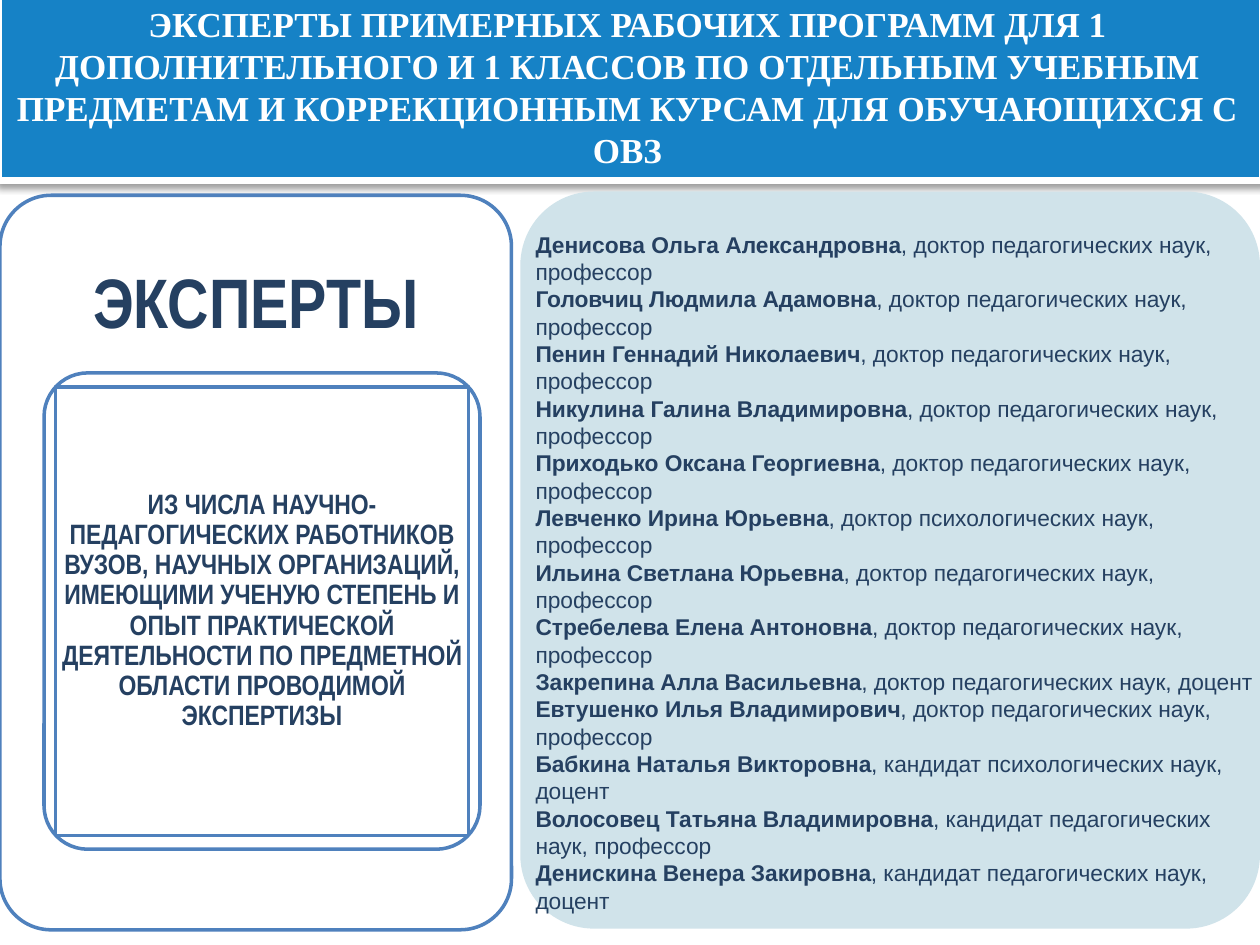
from lxml import etree
from pptx import Presentation
from pptx.dml.color import RGBColor
from pptx.enum.shapes import MSO_SHAPE
from pptx.enum.text import MSO_ANCHOR, MSO_AUTO_SIZE, PP_ALIGN
from pptx.oxml.ns import qn
from pptx.util import Inches, Pt

RECT, ROUND = MSO_SHAPE.RECTANGLE, MSO_SHAPE.ROUNDED_RECTANGLE
TOP, MIDDLE = MSO_ANCHOR.TOP, MSO_ANCHOR.MIDDLE
LEFT, CENTER = PP_ALIGN.LEFT, PP_ALIGN.CENTER
FIXED = MSO_AUTO_SIZE.NONE

COLORS = {"band": "1682C6", "white": "FFFFFF", "edge": "4F81BD",
          "panel": "D0E3EA", "ink": "254061", "shade": "000000"}

TITLE = ("ЭКСПЕРТЫ ПРИМЕРНЫХ РАБОЧИХ ПРОГРАММ ДЛЯ 1 ДОПОЛНИТЕЛЬНОГО И 1 КЛАССОВ "
         "ПО ОТДЕЛЬНЫМ УЧЕБНЫМ ПРЕДМЕТАМ И КОРРЕКЦИОННЫМ КУРСАМ "
         "ДЛЯ ОБУЧАЮЩИХСЯ С ОВЗ")
HEADING = "ЭКСПЕРТЫ"
CRITERIA = ("ИЗ ЧИСЛА НАУЧНО-ПЕДАГОГИЧЕСКИХ РАБОТНИКОВ ВУЗОВ, НАУЧНЫХ ОРГАНИЗАЦИЙ, "
            "ИМЕЮЩИМИ УЧЕНУЮ СТЕПЕНЬ И ОПЫТ ПРАКТИЧЕСКОЙ ДЕЯТЕЛЬНОСТИ "
            "ПО ПРЕДМЕТНОЙ ОБЛАСТИ ПРОВОДИМОЙ ЭКСПЕРТИЗЫ")
PED_PROF = "доктор педагогических наук, профессор"
EXPERTS = [
    ("Денисова Ольга Александровна", PED_PROF),
    ("Головчиц Людмила Адамовна", PED_PROF),
    ("Пенин Геннадий Николаевич", PED_PROF),
    ("Никулина Галина Владимировна", PED_PROF),
    ("Приходько Оксана Георгиевна", PED_PROF),
    ("Левченко Ирина Юрьевна", "доктор психологических наук, профессор"),
    ("Ильина Светлана Юрьевна", PED_PROF),
    ("Стребелева Елена Антоновна", PED_PROF),
    ("Закрепина Алла Васильевна", "доктор педагогических наук, доцент"),
    ("Евтушенко Илья Владимирович", PED_PROF),
    ("Бабкина Наталья Викторовна", "кандидат психологических наук, доцент"),
    ("Волосовец Татьяна Владимировна", "кандидат педагогических наук, профессор"),
    ("Денискина Венера Закировна", "кандидат педагогических наук, доцент"),
]


def color(name):
    return RGBColor.from_string(COLORS[name])


def place(shape, x, y, w, h):
    shape.left, shape.top = Inches(x), Inches(y)
    shape.width, shape.height = Inches(w), Inches(h)


def raise_up(shape):
    """Bring a placeholder in front of the shapes drawn so far."""
    shape.element.getparent().append(shape.element)


def add_box(slide, kind, x, y, w, h, fill, edge=None, width=2):
    box = slide.shapes.add_shape(kind, Inches(x), Inches(y), Inches(w), Inches(h))
    box.shadow.inherit = False
    box.fill.solid()
    box.fill.fore_color.rgb = color(fill)
    if kind == ROUND:
        box.adjustments[0] = 0.1
    if edge:
        box.line.color.rgb = color(edge)
        box.line.width = Pt(width)
    else:
        box.line.fill.background()
    return box


def set_frame(shape, anchor, side, top):
    frame = shape.text_frame
    frame.word_wrap = True
    frame.auto_size = FIXED
    frame.vertical_anchor = anchor
    frame.margin_left = frame.margin_right = Inches(side)
    frame.margin_top = frame.margin_bottom = Inches(top)
    return frame


def add_run(par, text, font, size, ink="ink", bold=True):
    run = par.add_run()
    run.text = text
    run.font.name, run.font.size, run.font.bold = font, Pt(size), bold
    run.font.color.rgb = color(ink)


def add_label(shape, text, size, side, top):
    par = set_frame(shape, MIDDLE, side, top).paragraphs[0]
    par.alignment, par.line_spacing = CENTER, 0.9
    add_run(par, text, "Arial Narrow", size)


def add_shadow(shape):
    effects = shape.element.spPr.find(qn("a:effectLst"))
    outer = etree.SubElement(effects, qn("a:outerShdw"), blurRad=str(Pt(4)),
                             dist=str(Pt(2)), dir="5400000", rotWithShape="0")
    tone = etree.SubElement(outer, qn("a:srgbClr"), val=COLORS["shade"])
    etree.SubElement(tone, qn("a:alpha"), val="38000")


def add_header(slide, x, y, w, h):
    # Blue band with the title over it
    add_shadow(add_box(slide, RECT, x, y, w, h, "band", "white", 4))
    title = slide.shapes.title
    place(title, x - 0.03, y, w + 0.01, h + 0.32)
    raise_up(title)
    par = set_frame(title, TOP, 0.1, 0.05).paragraphs[0]
    par.alignment = CENTER
    add_run(par, TITLE, "Times New Roman", 20, "white")


def add_card(slide, x, y, w, h):
    # Outer card and its heading
    add_box(slide, ROUND, x, y, w, h, "white", "edge")
    head = slide.shapes.add_textbox(Inches(x), Inches(y), Inches(w), Inches(h * 0.3))
    add_label(head, HEADING, 40, 0.17, 0.17)
    # Inner frame with the criteria
    add_box(slide, ROUND, x + 0.35, y + 1.41, 3.46, 3.78, "white", "edge")
    inner = add_box(slide, RECT, x + 0.44, y + 1.52, 3.28, 3.56, "white", "edge")
    add_label(inner, CRITERIA, 16, 0.04, 0.03)


def add_list(slide, x, y, w, h):
    # Tinted panel with the list of experts
    add_box(slide, ROUND, x, y, w, h, "panel")
    body = slide.placeholders[1]
    place(body, x + 0.04, y + 0.11, w, h - 0.03)
    raise_up(body)
    frame = set_frame(body, MIDDLE, 0.08, 0.08)
    for i, (name, rank) in enumerate(EXPERTS):
        par = frame.add_paragraph() if i else frame.paragraphs[0]
        par.alignment = LEFT
        par.space_before = par.space_after = Pt(0)
        props = par._p.get_or_add_pPr()
        props.set("marL", "0")
        props.set("indent", "0")
        etree.SubElement(props, qn("a:buNone"))
        add_run(par, name, "Arial", 13)
        add_run(par, ", " + rank, "Arial", 13, bold=False)


def main():
    deck = Presentation()
    deck.slide_width, deck.slide_height = Inches(10), Inches(7.5)
    slide = deck.slides.add_slide(deck.slide_layouts[1])
    add_header(slide, -0.01, -0.03, 10.03, 1.46)
    add_card(slide, 0, 1.55, 4.06, 5.83)
    add_list(slide, 4.13, 1.52, 5.87, 5.85)
    deck.save("out.pptx")


if __name__ == "__main__":
    main()
